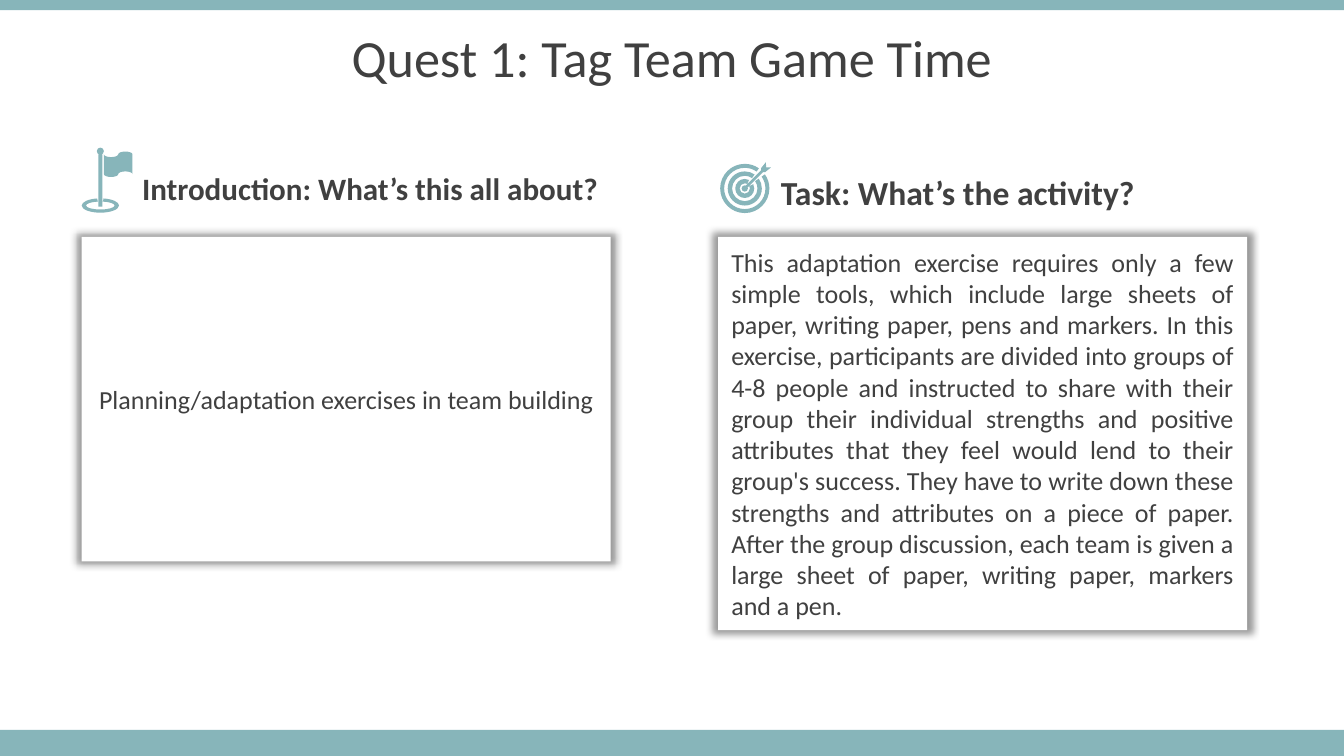
from dataclasses import dataclass
from math import ceil, cos, floor, radians, sin, tan

from lxml.etree import SubElement
from pptx import Presentation
from pptx.dml.color import RGBColor
from pptx.enum.shapes import MSO_SHAPE as SHAPE
from pptx.enum.text import MSO_ANCHOR as ANCHOR, PP_ALIGN as ALIGN
from pptx.oxml.ns import qn
from pptx.util import Cm, Pt


@dataclass(frozen=True)
class Theme:
    accent: RGBColor = RGBColor(0x87, 0xB5, 0xBA)
    card: RGBColor = RGBColor(0xFF, 0xFF, 0xFF)
    text: RGBColor = RGBColor(0x40, 0x40, 0x40)
    font: str = "Calibri"
    title: float = 37.3
    intro: float = 22.2
    task: float = 24
    body: float = 18.6


THEME = Theme()
WIDTH, HEIGHT = 33.87, 19.05
INTRO = "Planning/adaptation exercises in team building"
TASK = (
    "This adaptation exercise requires only a few simple tools, which include large sheets "
    "of paper, writing paper, pens and markers. In this exercise, participants are divided "
    "into groups of 4-8 people and instructed to share with their group their individual "
    "strengths and positive attributes that they feel would lend to their group's success. "
    "They have to write down these strengths and attributes on a piece of paper. After the "
    "group discussion, each team is given a large sheet of paper, writing paper, markers "
    "and a pen."
)


def paint(sp, color):
    sp.shadow.inherit = False
    sp.fill.solid()
    sp.fill.fore_color.rgb = color
    sp.line.fill.background()


def write(sp, text, size, align, bold=False, spacing=None, before=0):
    tf = sp.text_frame
    tf.word_wrap = True
    tf.vertical_anchor = ANCHOR.MIDDLE
    p = tf.paragraphs[0]
    p.alignment = align
    p.line_spacing = spacing
    p.space_before = Pt(before)
    r = p.add_run()
    r.text = text
    r.font.name = THEME.font
    r.font.size = Pt(size)
    r.font.bold = bold
    r.font.color.rgb = THEME.text


def add_rect(slide, x, y, w, h, color):
    sp = slide.shapes.add_shape(SHAPE.RECTANGLE, Cm(x), Cm(y), Cm(w), Cm(h))
    paint(sp, color)
    return sp


def add_glow_shadow(sp):
    effects = sp._element.spPr.find(qn("a:effectLst"))
    shadow = SubElement(effects, qn("a:outerShdw"), blurRad=str(Pt(5)), dist="0", dir="0",
                        sx="102000", sy="102000", algn="ctr", rotWithShape="0")
    color = SubElement(shadow, qn("a:srgbClr"), val="000000")
    SubElement(color, qn("a:alpha"), val="40000")


def add_card(slide, x, h, text, align):
    sp = add_rect(slide, x, 5.97, 13.33, h, THEME.card)
    add_glow_shadow(sp)
    tf = sp.text_frame
    tf.margin_left = tf.margin_right = Cm(0.33)
    tf.margin_top = tf.margin_bottom = Cm(0.18)
    write(sp, text, THEME.body, align)


def add_text(slide, x, y, w, h, text, size, align, **style):
    sp = slide.shapes.add_textbox(Cm(x), Cm(y), Cm(w), Cm(h))
    write(sp, text, size, align, **style)


def arc(rx, ry, start, end):
    low, high = sorted((start, end))
    quarters = [90 * i for i in range(floor(low / 90) + 1, ceil(high / 90))]
    stops = sorted([low, *quarters, high], reverse=start > end)
    segments = [[(rx * cos(radians(start)), -ry * sin(radians(start)))]]
    for a, b in zip(stops, stops[1:]):
        a, b = radians(a), radians(b)
        k = 4 / 3 * tan((b - a) / 4)
        unit = [(cos(a) - k * sin(a), sin(a) + k * cos(a)),
                (cos(b) + k * sin(b), sin(b) - k * cos(b)), (cos(b), sin(b))]
        segments.append([(rx * ux, -ry * uy) for ux, uy in unit])
    return segments


def polygon(*points):
    return [[point] for point in points]


def open_ring(outer, inner, gap_at, half_gap):
    start, end = gap_at + half_gap, gap_at + 360 - half_gap
    return arc(*outer, start, end) + arc(*inner, end, start)


def shift(segments, dx, dy):
    return [[(x + dx, y + dy) for x, y in segment] for segment in segments]


def bend(sp, segments):
    lines = sp._element.spPr.iter(qn("a:lnTo"))
    lines = iter(list(lines))
    for segment in segments:
        first, *others = [next(lines) for _ in segment]
        if others:
            first.tag = qn("a:cubicBezTo")
            for line in others:
                first.append(line[0])
                line.getparent().remove(line)


def add_icon(slide, x, y, contours):
    placed = [[[(Cm(px), Cm(py)) for px, py in segment] for segment in shift(contour, x, y)]
              for contour in contours]
    builder = slide.shapes.build_freeform(*placed[0][0][0])
    for i, (start, *segments) in enumerate(placed):
        if i:
            builder.move_to(*start[0])
        builder.add_line_segments(sum(segments, []), close=True)
    sp = builder.convert_to_shape()
    bend(sp, [segment for contour in placed for segment in contour[1:]])
    paint(sp, THEME.accent)


def flag_contours():
    base = shift(open_ring((0.47, 0.18), (0.36, 0.1), 90, 10), 0, 1.37)
    knob = arc(0.09, 0.09, 0, 360)
    pole = polygon((-0.05, 0.08), (0.05, 0.08), (0.05, 1.4), (-0.05, 1.4))
    top = (shift(arc(0.18, 0.07, 180, 360), 0.27, 0.08)
           + shift(arc(0.18, 0.07, 180, 0), 0.63, 0.08)[1:])
    bottom = (shift(arc(0.18, 0.07, 0, 180), 0.63, 0.58)
              + shift(arc(0.18, 0.07, 360, 180), 0.27, 0.58)[1:])
    return [base, top + bottom, knob, pole]


def target_contours():
    sizes = [(0.62, 0.52, 10), (0.43, 0.32, 10), (0.24, 0.13, 18)]
    rings = [open_ring((outer, outer), (inner, inner), 45, half)
             for outer, inner, half in sizes]
    half_arrow = [(0.08, -0.03), (0.46, -0.41), (0.51, -0.41), (0.66, -0.53), (0.54, -0.53)]
    mirrored = [(-y, -x) for x, y in half_arrow[:-1][::-1]]
    return rings + [arc(0.08, 0.08, 0, 360), polygon(*half_arrow, *mirrored)]


def main():
    prs = Presentation()
    prs.slide_width, prs.slide_height = Cm(WIDTH), Cm(HEIGHT)
    slide = prs.slides.add_slide(prs.slide_layouts[6])
    add_rect(slide, 0, 18.39, WIDTH, 0.66, THEME.accent)
    add_rect(slide, 0, 0, WIDTH, 0.26, THEME.accent)
    add_text(slide, 0, 0.46, WIDTH, 2.13, "Quest 1: Tag Team Game Time", THEME.title,
             ALIGN.CENTER, spacing=0.9, before=10)
    add_card(slide, 2.06, 8.18, INTRO, ALIGN.CENTER)
    add_card(slide, 18.1, 9.91, TASK, ALIGN.JUSTIFY)
    add_icon(slide, 2.53, 3.81, flag_contours())
    add_icon(slide, 18.77, 4.75, target_contours())
    add_text(slide, 3.33, 4.3, 12.04, 1.04, "Introduction: What’s this all about?",
             THEME.intro, ALIGN.LEFT, bold=True, spacing=0.8, before=10)
    add_text(slide, 19.43, 4.32, 12.04, 1.04, "Task: What’s the activity?",
             THEME.task, ALIGN.LEFT, bold=True, before=4.8)
    prs.save("out.pptx")


if __name__ == "__main__":
    main()
